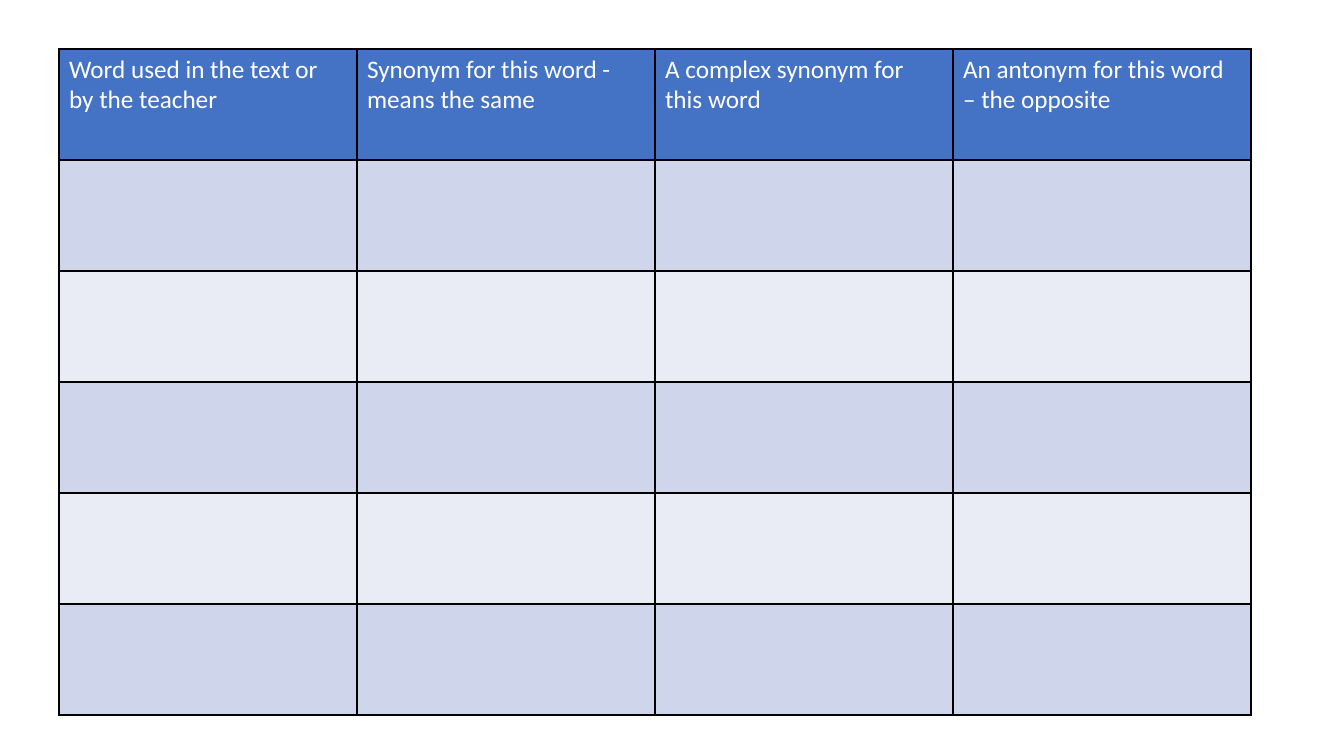
import pptx
import pptx.dml.color
import pptx.oxml
import pptx.oxml.ns
import pptx.util

RGB = pptx.dml.color.RGBColor
BLUE = RGB(0x44, 0x72, 0xC4)
DARK = RGB(0xCF, 0xD5, 0xEA)
LIGHT = RGB(0xE9, 0xEB, 0xF5)
WHITE = RGB(0xFF, 0xFF, 0xFF)
BLACK = RGB(0, 0, 0)

SCALE = 914400 / 100.8
HEADS = [
    "Word used in the text or by the teacher",
    "Synonym for this word - means the same",
    "A complex synonym for this word",
    "An antonym for this word – the opposite",
]
ROWS = 6


def px(count):
    """Turn pixels into EMU."""
    return pptx.util.Emu(round(count * SCALE))


class Deck:
    """Holds the text style and the current slide."""

    font = "Calibri"
    size = pptx.util.Pt(18)
    line = pptx.util.Pt(1)

    def __init__(self, width, height):
        self.show = pptx.Presentation()
        self.show.slide_width = px(width)
        self.show.slide_height = px(height)
        self.slide = self.show.slides.add_slide(self.show.slide_layouts[6])

    def border(self, cell):
        props = cell._tc.get_or_add_tcPr()
        for side in "LRTB":
            props.append(pptx.oxml.parse_xml(
                f'<a:ln{side} {pptx.oxml.ns.nsdecls("a")} w="{self.line}">'
                f'<a:solidFill><a:srgbClr val="{BLACK}"/></a:solidFill>'
                f'</a:ln{side}>'))

    def paint(self, cell, color):
        self.border(cell)
        cell.fill.solid()
        cell.fill.fore_color.rgb = color

    def label(self, cell, text):
        run = cell.text_frame.paragraphs[0].add_run()
        run.text = text
        run.font.name = self.font
        run.font.size = self.size
        run.font.bold = False
        run.font.color.rgb = WHITE

    def table(self, left, top, width, height, heads, rows):
        """Add a grid with a header row and banded empty rows below."""
        grid = self.slide.shapes.add_table(
            rows, len(heads), px(left), px(top),
            px(width * len(heads)), px(height * rows)).table
        for col in grid.columns:
            col.width = px(width)
        for index, row in enumerate(grid.rows):
            row.height = px(height)
            band = DARK if index % 2 else LIGHT
            for cell in row.cells:
                self.paint(cell, band if index else BLUE)
        for cell, text in zip(grid.rows[0].cells, heads):
            self.label(cell, text)


def main():
    deck = Deck(1344, 756)
    deck.table(59, 49, 298, 111, HEADS, ROWS)
    deck.show.save("out.pptx")


if __name__ == "__main__":
    main()
